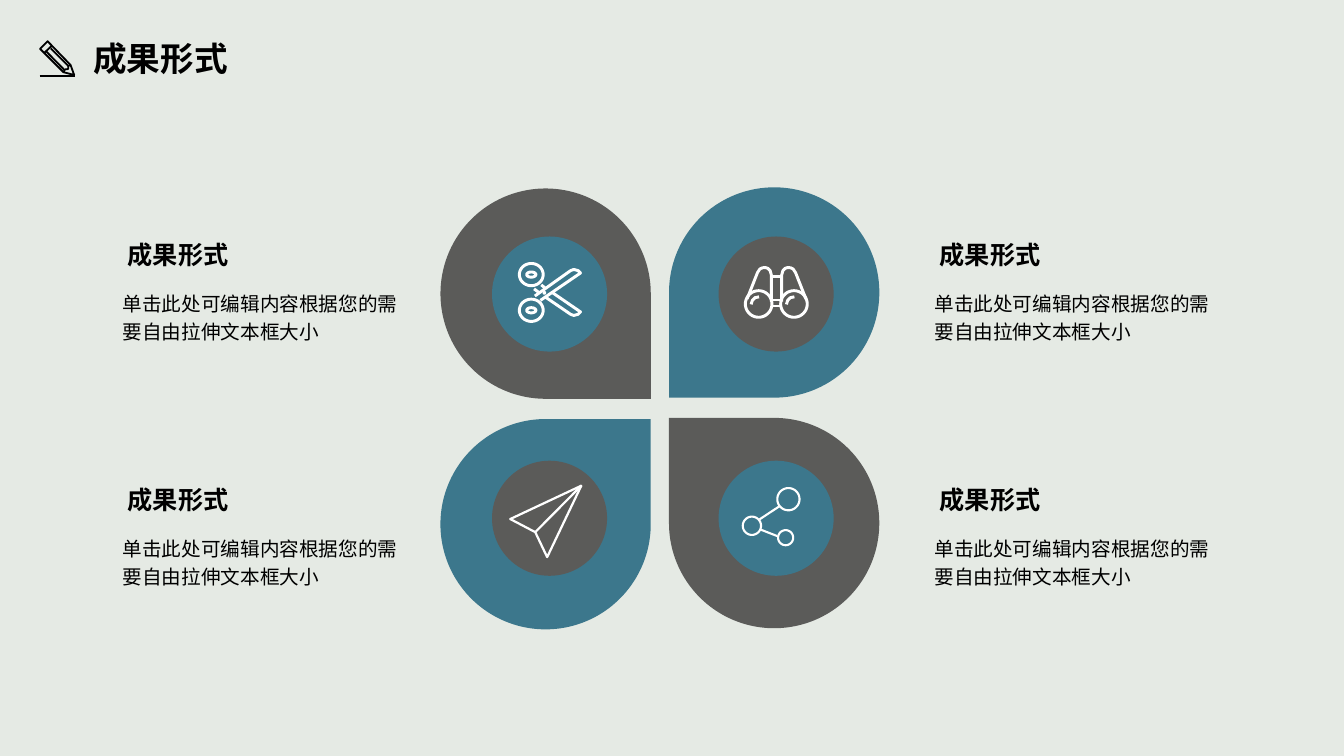
from math import cos, pi, sin

from lxml.etree import SubElement
from pptx import Presentation
from pptx.dml.color import RGBColor
from pptx.enum.shapes import MSO_SHAPE as Preset
from pptx.enum.text import MSO_AUTO_SIZE as AutoSize
from pptx.oxml.ns import qn
from pptx.util import Cm, Pt

TEAL, GREY, PAPER, BLACK, WHITE = "3C778C", "5B5B59", "E5EAE4", "000000", "FFFFFF"
WIDTH, HEIGHT = 33.87, 19.05
HEADING = "成果形式"
BODY = "单击此处可编辑内容根据您的需要自由拉伸文本框大小"


def color(code):
    return RGBColor.from_string(code)


def write(frame, text, size=14, bold=False, ink=BLACK, font="Noto Sans CJK SC",
          spacing=None, after=None):
    para = frame.paragraphs[0]
    para.line_spacing = spacing
    para.space_after = None if after is None else Pt(after)
    span = para.add_run()
    span.text = text
    span.font.size = Pt(size)
    span.font.bold = bold
    span.font.name = font
    span.font.color.rgb = color(ink)
    SubElement(span.font._element, qn("a:ea"), typeface=font)


def ring(x, y, width, height=None, steps=48):
    """Points of an ellipse centred on x, y."""
    height = height or width
    angles = [2 * pi * step / steps for step in range(steps)]
    points = [(x + width / 2 * cos(angle), y + height / 2 * sin(angle)) for angle in angles]
    return points + points[:1]


class Page:
    """Draws on one slide, in centimetres."""

    def __init__(self, slide):
        self.shapes = slide.shapes

    def solid(self, preset, left, top, width, height, fill, turn=0):
        shape = self.shapes.add_shape(preset, Cm(left), Cm(top), Cm(width), Cm(height))
        shape.rotation = turn
        shape.shadow.inherit = False
        shape.fill.solid()
        shape.fill.fore_color.rgb = color(fill)
        shape.line.fill.background()

    def icon(self, strokes, ink, weight):
        """Draw strokes as one shape; a stroke that ends where it starts is closed."""
        paths = [[(Cm(x), Cm(y)) for x, y in stroke] for stroke in strokes]
        builder = self.shapes.build_freeform(*paths[0][0])
        for number, (start, *rest) in enumerate(paths):
            if number:
                builder.move_to(*start)
            builder.add_line_segments(rest, close=rest[-1] == start)
        shape = builder.convert_to_shape()
        shape.shadow.inherit = False
        shape.fill.background()
        shape.line.color.rgb = color(ink)
        shape.line.width = Pt(weight)
        SubElement(shape.element.spPr.find(qn("a:ln")), qn("a:round"))

    def frame(self, left, top, width, height):
        frame = self.shapes.add_textbox(Cm(left), Cm(top), Cm(width), Cm(height)).text_frame
        frame.word_wrap = True
        return frame

    def heading(self, left, top, width, height, text, size):
        frame = self.frame(left, top, width, height)
        frame.auto_size = AutoSize.SHAPE_TO_FIT_TEXT
        write(frame, text, size=size, bold=True)

    def body(self, left, top, width, height, text):
        frame = self.frame(left, top, width, height)
        frame.margin_left = frame.margin_right = frame.margin_top = frame.margin_bottom = 0
        write(frame, text, spacing=1.2, after=6)


def pencil():
    return [
        [(1.87, 1.89), (1.78, 1.64), (1.2, 1.04), (1.01, 1.23), (1.6, 1.82), (1.87, 1.89)],
        [(1.78, 1.64), (1.72, 1.66), (1.72, 1.74), (1.64, 1.75), (1.6, 1.82)],
        [(1.3, 1.16), (1.12, 1.33)],
        [(1.28, 1.22), (1.73, 1.67)],
        [(1.17, 1.3), (1.62, 1.76)],
        [(1, 1.92), (1.9, 1.92)],
    ]


def scissors():
    front = [(13.62, 7.57), (14.63, 6.88), (14.57, 6.82), (14.46, 6.79), (14.38, 6.82),
             (13.48, 7.46)]
    back = [(13.93, 7.38), (14.63, 7.86), (14.57, 7.92), (14.46, 7.95), (14.38, 7.92),
            (13.75, 7.49)]
    stubs = [[(13.64, 7.18), (13.73, 7.25)], [(13.46, 7.28), (13.58, 7.37)]]
    handles = [ring(13.39, y, *size) for y in (6.92, 7.82)
               for size in ((0.6, 0.56), (0.23, 0.13))]
    return [front, back, *stubs, *handles, ring(13.72, 7.38, 0.02)]


def binoculars():
    gap, middle = 0.89, 19.57
    tube = [(18.83, 7.53), (19.09, 6.87), (19.15, 6.78), (19.21, 6.75), (19.28, 6.74),
            (19.35, 6.76), (19.41, 6.82), (19.44, 6.93), (19.44, 7.6)]
    glint = [(18.93, 7.67), (18.96, 7.57), (19.03, 7.5), (19.13, 7.48)]
    strokes = [tube, [(2 * middle - x, y) for x, y in tube]]
    for shift in (0, gap):
        strokes += [ring(19.12 + shift, 7.66, 0.67), [(x + shift, y) for x, y in glint]]
    return strokes + [[(19.44, y), (19.7, y)] for y in (6.97, 7.56, 7.71)]


def plane():
    tail, tip, wing, fold = (12.86, 13.08), (14.65, 12.24), (13.79, 14.04), (13.49, 13.41)
    return [[tail, tip, wing, fold, tail], [fold, tip]]


def nodes():
    return [
        ring(19.87, 12.58, 0.56), ring(18.95, 13.25, 0.46), ring(19.8, 13.55, 0.38),
        [(19.14, 13.09), (19.64, 12.76)],
        [(19.18, 13.35), (19.59, 13.51)],
    ]


def main():
    deck = Presentation()
    deck.slide_width, deck.slide_height = Cm(WIDTH), Cm(HEIGHT)
    page = Page(deck.slides.add_slide(deck.slide_layouts[6]))
    page.solid(Preset.RECTANGLE, 0, 0, WIDTH, HEIGHT, PAPER)

    # column, row, petal colour, disc colour, turn that points the petal inwards
    petals = [(0, 0, GREY, TEAL, 90), (1, 0, TEAL, GREY, 180),
              (0, 1, TEAL, GREY, 0), (1, 1, GREY, TEAL, 270)]
    for column, row, petal, disc, turn in petals:
        page.solid(Preset.TEAR, 11.1 + 5.76 * column, 4.75 - 0.03 * column + 5.81 * row,
                   5.3, 5.3, petal, turn)
        page.solid(Preset.OVAL, 12.4 + 5.71 * column, 5.96 + 5.65 * row, 2.9, 2.9, disc)
        left, top = 2.97 + 20.46 * column, 5.91 + 6.17 * row
        page.heading(left, top, 3.81, 1.02, HEADING, 18)
        page.body(left + 0.12, top + 1.33, 7.37, 1.4, BODY)

    page.heading(2.1, 0.84, 6.43, 1.27, HEADING, 24)
    page.icon(pencil(), BLACK, 1.3)
    page.icon(binoculars(), WHITE, 2.1)
    page.icon(scissors(), WHITE, 2.1)
    page.icon(plane(), WHITE, 1.6)
    page.icon(nodes(), WHITE, 1.5)
    deck.save("out.pptx")


if __name__ == "__main__":
    main()
